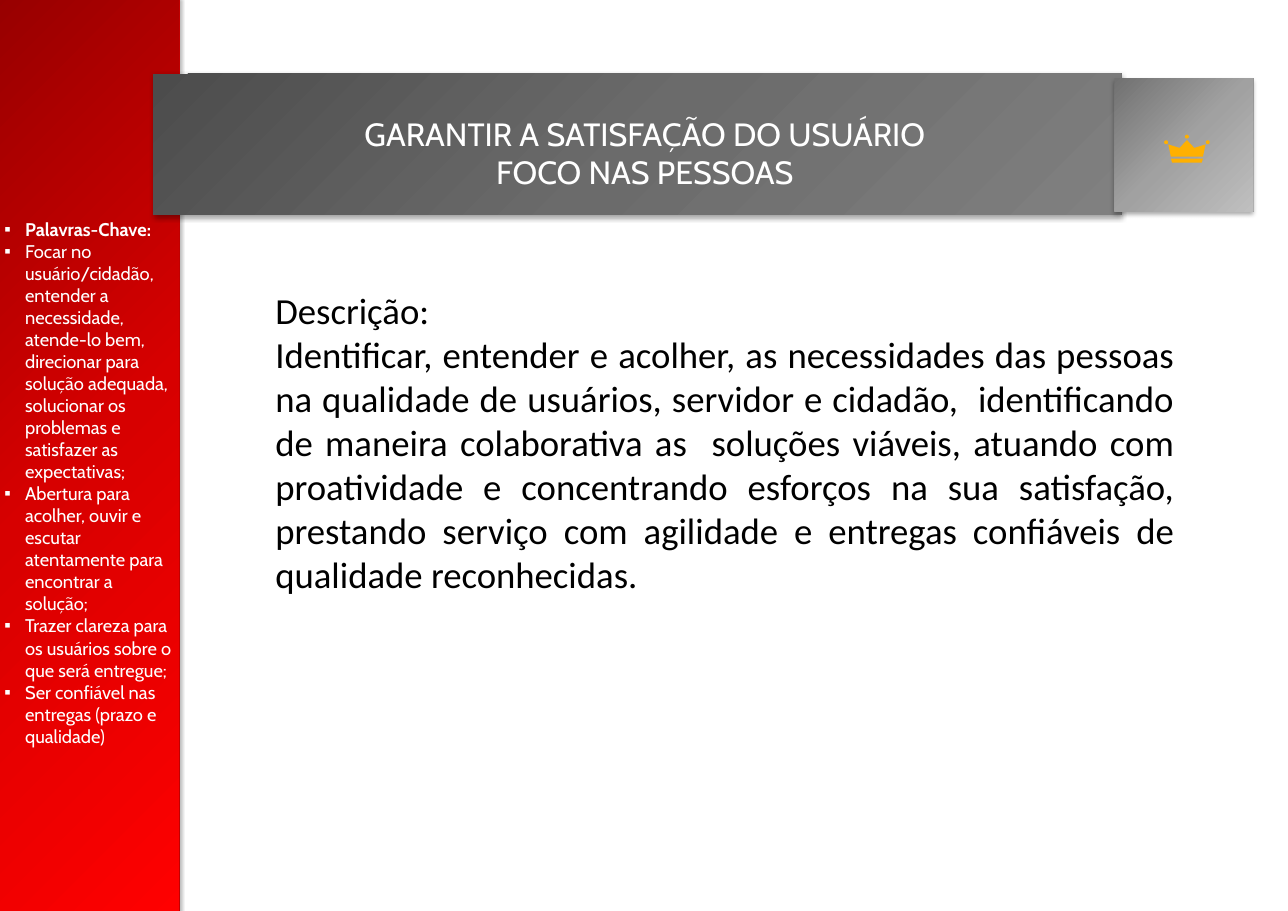
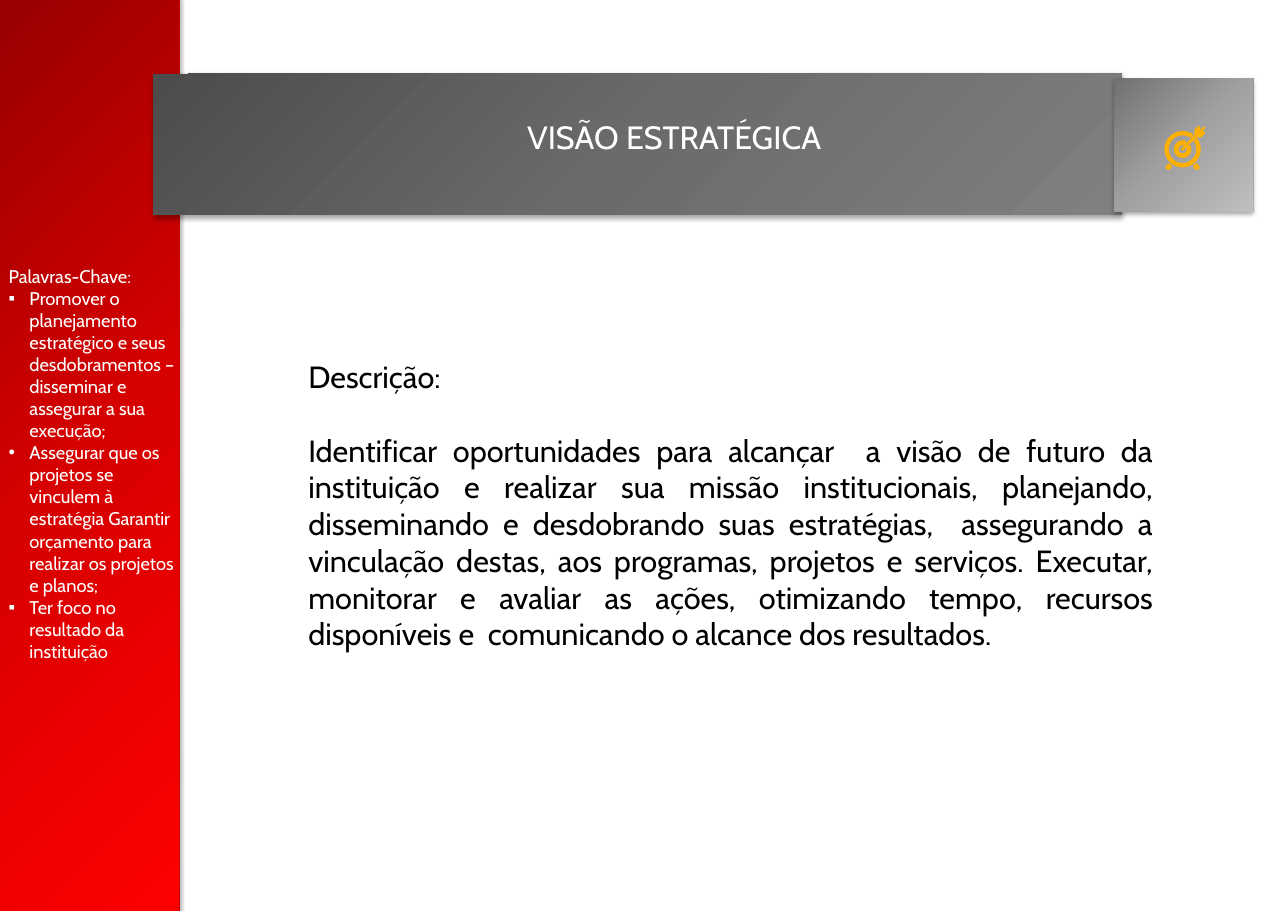
import lxml.etree
import pptx
import pptx.dml.color
import pptx.enum.shapes
import pptx.enum.text
import pptx.oxml.ns
import pptx.util

Cm = pptx.util.Cm
Pt = pptx.util.Pt
RGBColor = pptx.dml.color.RGBColor
Shape = pptx.enum.shapes.MSO_SHAPE
Align = pptx.enum.text.PP_ALIGN
qn = pptx.oxml.ns.qn

WHITE = RGBColor(0xFF, 0xFF, 0xFF)
BLACK = RGBColor(0x00, 0x00, 0x00)
GOLD = RGBColor(0xFF, 0xB0, 0x00)
EDGE_RED = RGBColor(0xC0, 0x00, 0x00)
REDS = (RGBColor(0x97, 0x00, 0x00), RGBColor(0xD7, 0x00, 0x00), RGBColor(0xFF, 0x00, 0x00))
DARK_GREYS = (RGBColor(0x4C, 0x4C, 0x4C), RGBColor(0x6B, 0x6B, 0x6B), RGBColor(0x80, 0x80, 0x80))
LIGHT_GREYS = (RGBColor(0x71, 0x71, 0x71), RGBColor(0xA1, 0xA1, 0xA1), RGBColor(0xBF, 0xBF, 0xBF))

SIDEBAR = (-0.15, -0.1, 4.29, 21.2)
TITLE_BAND = (3.53, 1.7, 22.33, 3.25)
ICON_TILE = (25.7, 1.8, 3.2, 3.07)

TITLE = {"size": Pt(21), "name": "Cabin"}
KEYWORD = {"size": Pt(12), "name": "Cabin"}
CENTRED = {"alignment": Align.CENTER}
JUSTIFIED = {"alignment": Align.JUSTIFY}
SQUARE = "▪"
DOT = "•"


def mirrored(points):
    return [(-x, y) for x, y in reversed(points)]


class Deck:
    def __init__(self):
        self.deck = pptx.Presentation()
        self.deck.slide_width = Cm(29.7)
        self.deck.slide_height = Cm(21)
        self.page = None
        self.centre = (0, 0)

    def add_page(self):
        self.page = self.deck.slides.add_slide(self.deck.slide_layouts[6])
        self.block(SIDEBAR, REDS, EDGE_RED)
        self.block(TITLE_BAND, DARK_GREYS)
        self.block(ICON_TILE, LIGHT_GREYS)

    def block(self, place, colours, edge=None):
        box = self.page.shapes.add_shape(Shape.RECTANGLE, *map(Cm, place))
        box.fill.gradient()
        box.fill.gradient_angle = 315
        properties = box._element.spPr
        lxml.etree.SubElement(properties.find(".//" + qn("a:gsLst")), qn("a:gs"), pos="0")
        for number, (stop, colour) in enumerate(zip(box.fill.gradient_stops, colours)):
            stop.color.rgb = colour
            stop.position = number / 2
        if edge is None:
            box.line.fill.background()
        else:
            box.line.color.rgb = edge
            box.line.width = Pt(0.75)
        box.shadow.inherit = False
        shadow = lxml.etree.SubElement(
            properties.find(qn("a:effectLst")), qn("a:outerShdw"),
            blurRad=str(Pt(3.1)), dist=str(Pt(1.8)), dir="5400000", rotWithShape="0")
        colour = lxml.etree.SubElement(shadow, qn("a:srgbClr"), val=str(BLACK))
        lxml.etree.SubElement(colour, qn("a:alpha"), val="35000")

    def text(self, place, lines, font, colour, layout=None):
        box = self.page.shapes.add_textbox(*map(Cm, place))
        frame = box.text_frame
        frame.word_wrap = True
        frame.auto_size = pptx.enum.text.MSO_AUTO_SIZE.SHAPE_TO_FIT_TEXT
        for number, (words, bullet, extra) in enumerate(lines):
            para = frame.paragraphs[0] if number == 0 else frame.add_paragraph()
            if bullet:
                self.bullet(para, bullet)
            for name, value in (layout or {}).items():
                setattr(para, name, value)
            span = para.add_run()
            span.text = words
            for name, value in {**font, **extra}.items():
                setattr(span.font, name, value)
            span.font.color.rgb = colour
        return frame

    def bullet(self, para, symbol):
        properties = para._p.get_or_add_pPr()
        properties.set("marL", str(Cm(0.48)))
        properties.set("indent", str(-Cm(0.48)))
        lxml.etree.SubElement(properties, qn("a:buFont"), typeface="Arial")
        lxml.etree.SubElement(properties, qn("a:buChar"), char=symbol)

    def title(self, place, *lines):
        self.text(place, [(line, None, {}) for line in lines], TITLE, WHITE, CENTRED)

    def keywords(self, place, lines):
        self.text(place, lines, KEYWORD, WHITE)

    def description(self, place, words, font, gap=0):
        lines = [("Descrição:", None, {}), (words, None, {})]
        frame = self.text(place, lines, font, BLACK, JUSTIFIED)
        frame.paragraphs[0].space_after = Pt(gap)

    def gild(self, shape):
        shape.fill.solid()
        shape.fill.fore_color.rgb = GOLD
        shape.line.fill.background()
        shape.shadow.inherit = False

    def outline(self, points):
        left, top = self.centre
        spots = [(Cm(left + x), Cm(top + y)) for x, y in points]
        builder = self.page.shapes.build_freeform(*spots[0])
        builder.add_line_segments(spots[1:], close=True)
        self.gild(builder.convert_to_shape())

    def round_shape(self, kind, x, y, size):
        left, top = self.centre
        corner = (left + x - size / 2, top + y - size / 2)
        shape = self.page.shapes.add_shape(kind, *map(Cm, (*corner, size, size)))
        self.gild(shape)
        return shape

    def open_ring(self, size, thickness, half_gap):
        ring = self.round_shape(Shape.BLOCK_ARC, 0, 0, size)
        ring.adjustments[0] = (315 + half_gap) * 0.6
        ring.adjustments[1] = (315 - half_gap) * 0.6
        ring.adjustments[2] = thickness / size

    def crown(self):
        self.centre = (27.37, 3.42)
        half = [(0.17, -0.01), (0.43, -0.09), (0.37, 0.19)]
        self.outline([(0, -0.19)] + half + mirrored(half))
        base = [(0.37, 0.24), (0.34, 0.33)]
        self.outline(base + mirrored(base))
        for x, y in ((-0.48, -0.14), (0, -0.27), (0.48, -0.14)):
            self.round_shape(Shape.OVAL, x, y, 0.09)

    def target(self):
        self.centre = (27.27, 3.44)
        self.open_ring(0.84, 0.1, 8)
        self.open_ring(0.41, 0.11, 17)
        foot = [(0.32, 0.32), (0.39, 0.39), (0.39, 0.45),
                (0.34, 0.47), (0.29, 0.47), (0.24, 0.39)]
        self.outline(foot)
        self.outline(mirrored(foot))
        self.outline([
            (0.37, -0.55), (0.27, -0.44), (0.27, -0.32), (-0.04, -0.01),
            (-0.02, 0.03), (0.02, 0.02), (0.32, -0.27), (0.43, -0.27),
            (0.52, -0.37), (0.52, -0.4), (0.44, -0.42), (0.52, -0.47),
            (0.52, -0.5), (0.47, -0.52), (0.42, -0.44), (0.39, -0.52)])


def user_page(deck):
    deck.add_page()
    deck.title((6.5, 2.51, 16.74, 2.06),
               "GARANTIR A SATISFAÇÃO DO USUÁRIO", "FOCO NAS PESSOAS")
    deck.keywords((-0.15, 4.9, 4.39, 13.59), [
        ("Palavras-Chave:", SQUARE, {"bold": True}),
        ("Focar no usuário/cidadão, entender a necessidade, atende-lo bem, "
         "direcionar para solução adequada, solucionar os problemas e "
         "satisfazer as expectativas;", SQUARE, {}),
        ("Abertura para acolher, ouvir e escutar atentamente para encontrar "
         "a solução;", SQUARE, {}),
        ("Trazer clareza para os usuários sobre o que será entregue;", SQUARE, {}),
        ("Ser confiável nas entregas (prazo e qualidade)", SQUARE, {})])
    deck.crown()
    deck.description(
        (6.1, 6.5, 21.23, 7.44),
        "Identificar, entender e acolher, as necessidades das pessoas na "
        "qualidade de usuários, servidor e cidadão,  identificando de maneira "
        "colaborativa as  soluções viáveis, atuando com proatividade e "
        "concentrando esforços na sua satisfação, prestando serviço com "
        "agilidade e entregas confiáveis de qualidade reconhecidas.",
        {"size": Pt(24), "name": "Calibri"})


def strategy_page(deck):
    deck.add_page()
    deck.title((8.84, 2.57, 13.41, 1.14), "VISÃO ESTRATÉGICA")
    deck.keywords((-0.05, 5.99, 4.47, 10), [
        ("Palavras-Chave:", None, {}),
        ("Promover o planejamento estratégico e seus desdobramentos – "
         "disseminar e assegurar a sua execução;", SQUARE, {}),
        ("Assegurar que os projetos se vinculem à estratégia Garantir "
         "orçamento para realizar os projetos e planos;", DOT, {}),
        ("Ter foco no resultado da instituição", SQUARE, {})])
    deck.target()
    deck.description(
        (6.86, 8.13, 19.99, 7.95),
        "Identificar oportunidades para alcançar  a visão de futuro da "
        "instituição e realizar sua missão institucionais, planejando, "
        "disseminando e desdobrando suas estratégias,  assegurando a "
        "vinculação destas, aos programas, projetos e serviços. Executar, "
        "monitorar e avaliar as ações, otimizando tempo, recursos disponíveis "
        "e  comunicando o alcance dos resultados.",
        {"size": Pt(20), "name": "Cabin"}, gap=24)


def main():
    deck = Deck()
    user_page(deck)
    strategy_page(deck)
    deck.deck.save("out.pptx")


if __name__ == "__main__":
    main()
